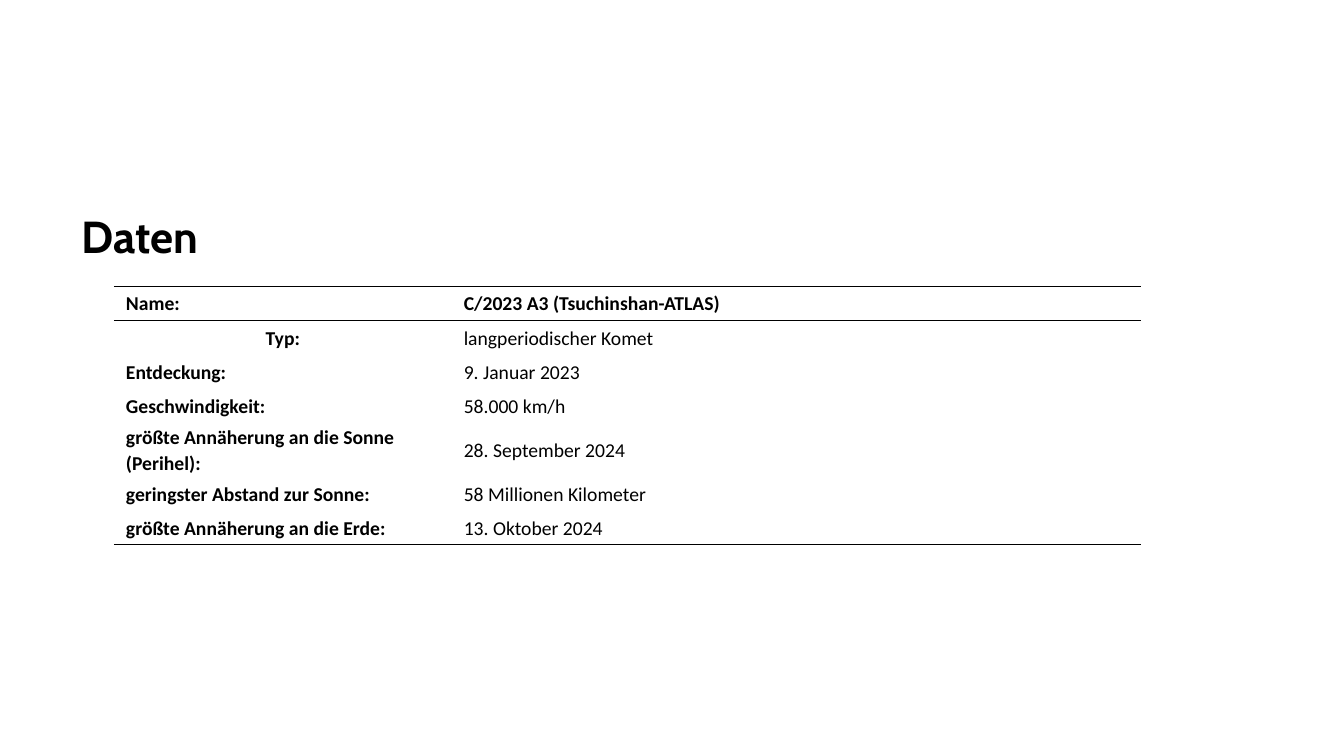
import pptx
import pptx.dml.color
import pptx.enum.text
import pptx.oxml
import pptx.oxml.ns
import pptx.util
from pptx.util import Inches

BLACK = "000000"
NO_STYLE = "{2D5ABB26-0587-4C30-8999-92F81FD0307C}"
COMET_DATA = [
    ("Name:", "C/2023 A3 (Tsuchinshan-ATLAS)"),
    ("Typ:", "langperiodischer Komet"),
    ("Entdeckung:", "9. Januar 2023"),
    ("Geschwindigkeit:", "58.000 km/h"),
    ("größte Annäherung an die Sonne (Perihel):", "28. September 2024"),
    ("geringster Abstand zur Sonne:", "58 Millionen Kilometer"),
    ("größte Annäherung an die Erde:", "13. Oktober 2024"),
]


def color(value):
    """Turn a hex string into a colour."""
    return pptx.dml.color.RGBColor.from_string(value)


def write(paragraph, text, font_name, size, bold):
    """Fill a paragraph with one formatted run."""
    paragraph.text = text
    font = paragraph.runs[0].font
    font.name = font_name
    font.size = pptx.util.Pt(size)
    font.bold = bold
    font.color.rgb = color(BLACK)


def add_rules(cell, edges, width=1):
    """Draw solid lines on the given cell edges, listed top before bottom."""
    for position, edge in enumerate(edges):
        rule = pptx.oxml.parse_xml(
            f'<a:ln{edge} {pptx.oxml.ns.nsdecls("a")} w="{pptx.util.Pt(width)}">'
            f'<a:solidFill><a:srgbClr val="{BLACK}"/></a:solidFill></a:ln{edge}>')
        cell._tc.get_or_add_tcPr().insert(position, rule)


def add_title(slide, left, top, width, height):
    """Place the heading in its box."""
    frame = slide.shapes.add_textbox(left, top, width, height).text_frame
    frame.word_wrap = True
    frame.vertical_anchor = pptx.enum.text.MSO_ANCHOR.MIDDLE
    heading = frame.paragraphs[0]
    write(heading, "Daten", "Cabin", 32, True)
    heading.line_spacing = 0.9


def fill_cell(cell, text, bold):
    """Write one table entry with its margins and spacing."""
    cell.fill.background()
    cell.vertical_anchor = pptx.enum.text.MSO_ANCHOR.MIDDLE
    cell.margin_left = cell.margin_right = Inches(0.12)
    cell.margin_top = cell.margin_bottom = Inches(0.01)
    entry = cell.text_frame.paragraphs[0]
    write(entry, text, "Calibri", 14, bold)
    entry.line_spacing = 1.07
    entry.space_after = pptx.util.Pt(8)


def add_comet_table(slide, left, top, width, height):
    """Place the table of comet data in its box."""
    last = len(COMET_DATA) - 1
    table = slide.shapes.add_table(last + 1, 2, left, top, width, height).table
    table.first_row = table.horz_banding = False
    table._tbl.tblPr.find(pptx.oxml.ns.qn("a:tableStyleId")).text = NO_STYLE
    label_width = Inches(3.35)
    table.columns[0].width = label_width
    table.columns[1].width = width - label_width
    for row, entries in enumerate(COMET_DATA):
        table.rows[row].height = Inches(0.34)
        for column, text in enumerate(entries):
            cell = table.cell(row, column)
            fill_cell(cell, text, row == 0 or column == 0)
            add_rules(cell, {0: "TB", last: "B"}.get(row, ""))
    type_label = table.cell(1, 0).text_frame.paragraphs[0]
    type_label.alignment = pptx.enum.text.PP_ALIGN.CENTER


def main():
    """Build and save the slide."""
    presentation = pptx.Presentation()
    presentation.slide_width = Inches(13.33)
    presentation.slide_height = Inches(7.5)
    slide = presentation.slides.add_slide(presentation.slide_layouts[6])
    add_comet_table(slide, Inches(1.13), Inches(2.84), Inches(10.19), Inches(2.53))
    add_title(slide, Inches(0.71), Inches(1.88), Inches(11.5), Inches(0.99))
    presentation.save("out.pptx")


if __name__ == "__main__":
    main()
